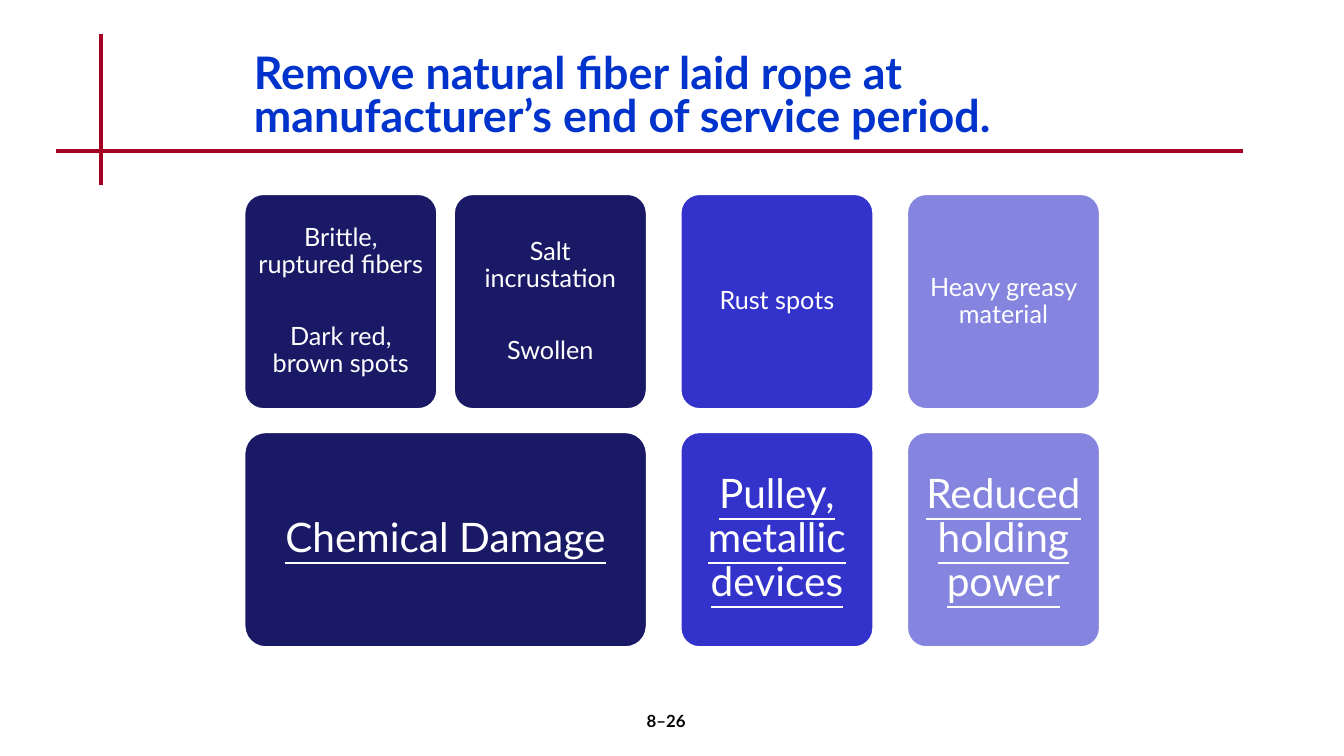
import dataclasses

import lxml.etree
import pptx
import pptx.dml.color
import pptx.enum.shapes
import pptx.enum.text
import pptx.oxml.ns
import pptx.util

Cm = pptx.util.Cm
Pt = pptx.util.Pt
ALIGN = pptx.enum.text.PP_ALIGN
ANCHOR = pptx.enum.text.MSO_ANCHOR

COLORS = {
    "title": "0033CC",
    "rule": "A50021",
    "chemical": "191966",
    "metallic": "3333CC",
    "holding": "8585E0",
    "white": "FFFFFF",
    "black": "000000",
}
FONT = "Lato"
LEFT, TOP = 6.15, 4.88
CARD_WIDTH, CARD_HEIGHT = 4.88, 5.44
SYMPTOM_GAP, CAUSE_GAP, ROW_GAP = 0.4, 0.83, 0.56


@dataclasses.dataclass(frozen=True)
class Style:
    size: float
    color: str = "white"
    bold: bool = False
    underline: bool = False
    align: ALIGN = ALIGN.CENTER
    line_spacing: float = 0.9
    gap: float = 0


@dataclasses.dataclass(frozen=True)
class Cause:
    name: str
    color: str
    symptoms: list[list[str]]


@dataclasses.dataclass(frozen=True)
class Rule:
    start: tuple[float, float]
    end: tuple[float, float]


CAUSES = [
    Cause("Chemical Damage", "chemical", [
        ["Brittle, ruptured fibers", "Dark red, brown spots"],
        ["Salt incrustation", "Swollen"],
    ]),
    Cause("Pulley, metallic devices", "metallic", [["Rust spots"]]),
    Cause("Reduced holding power", "holding", [["Heavy greasy material"]]),
]
RULES = [
    Rule((2.54, 0.85), (2.54, 4.66)),
    Rule((1.42, 3.81), (31.33, 3.81)),
]
TITLE = Style(32, "title", bold=True, align=ALIGN.LEFT, line_spacing=0.8)
PAGE = Style(12, "black", bold=True, line_spacing=1)
SYMPTOM = Style(18, gap=32)
CAUSE = Style(29, underline=True)


def rgb(name: str) -> pptx.dml.color.RGBColor:
    return pptx.dml.color.RGBColor.from_string(COLORS[name])


def write(frame, lines: list[str], style: Style) -> None:
    frame.word_wrap = True
    frame.text = "\n".join(lines)
    for index, paragraph in enumerate(frame.paragraphs):
        paragraph.alignment = style.align
        paragraph.line_spacing = style.line_spacing
        if index:
            paragraph.space_before = Pt(style.gap)
        for run in paragraph.runs:
            run.font.name = FONT
            run.font.size = Pt(style.size)
            run.font.bold = style.bold
            run.font.underline = style.underline
            run.font.color.rgb = rgb(style.color)


def add_label(slide, left: float, top: float, width: float, height: float,
              text: str, style: Style) -> None:
    label = slide.shapes.add_textbox(Cm(left), Cm(top), Cm(width), Cm(height))
    label.text_frame.vertical_anchor = ANCHOR.TOP
    write(label.text_frame, [text], style)


def add_rule(slide, rule: Rule) -> None:
    line = slide.shapes.add_connector(
        pptx.enum.shapes.MSO_CONNECTOR.STRAIGHT,
        *map(Cm, rule.start + rule.end))
    line.line.color.rgb = rgb("rule")
    line.line.width = Pt(3)
    lxml.etree.SubElement(line._element.spPr, pptx.oxml.ns.qn("a:effectLst"))


def add_card(slide, left: float, top: float, width: float, color: str,
             lines: list[str], style: Style, margin: float) -> None:
    card = slide.shapes.add_shape(
        pptx.enum.shapes.MSO_SHAPE.ROUNDED_RECTANGLE,
        Cm(left), Cm(top), Cm(width), Cm(CARD_HEIGHT))
    card.adjustments[0] = 0.1
    card.shadow.inherit = False
    card.fill.solid()
    card.fill.fore_color.rgb = rgb(color)
    card.line.color.rgb = rgb("white")
    card.line.width = Pt(2)
    frame = card.text_frame
    frame.vertical_anchor = ANCHOR.MIDDLE
    frame.margin_left = frame.margin_right = Cm(margin)
    frame.margin_top = frame.margin_bottom = Cm(margin)
    write(frame, lines, style)


def add_causes(slide) -> None:
    left = LEFT
    for cause in CAUSES:
        step = CARD_WIDTH + SYMPTOM_GAP
        width = len(cause.symptoms) * step - SYMPTOM_GAP
        add_card(slide, left, TOP + CARD_HEIGHT + ROW_GAP, width,
                 cause.color, [cause.name], CAUSE, 0.3)
        for column, symptoms in enumerate(cause.symptoms):
            add_card(slide, left + column * step, TOP, CARD_WIDTH,
                     cause.color, symptoms, SYMPTOM, 0.18)
        left += width + CAUSE_GAP


def main() -> None:
    deck = pptx.Presentation()
    deck.slide_width = Cm(33.87)
    deck.slide_height = Cm(19.05)
    slide = deck.slides.add_slide(deck.slide_layouts[6])
    for rule in RULES:
        add_rule(slide, rule)
    add_label(slide, 6.15, 1.27, 22.43, 2.54,
              "Remove natural fiber laid rope at manufacturer’s end of service period.",
              TITLE)
    add_causes(slide)
    add_label(slide, 13.26, 17.78, 7.06, 1.27, "8–26", PAGE)
    deck.save("out.pptx")


if __name__ == "__main__":
    main()
